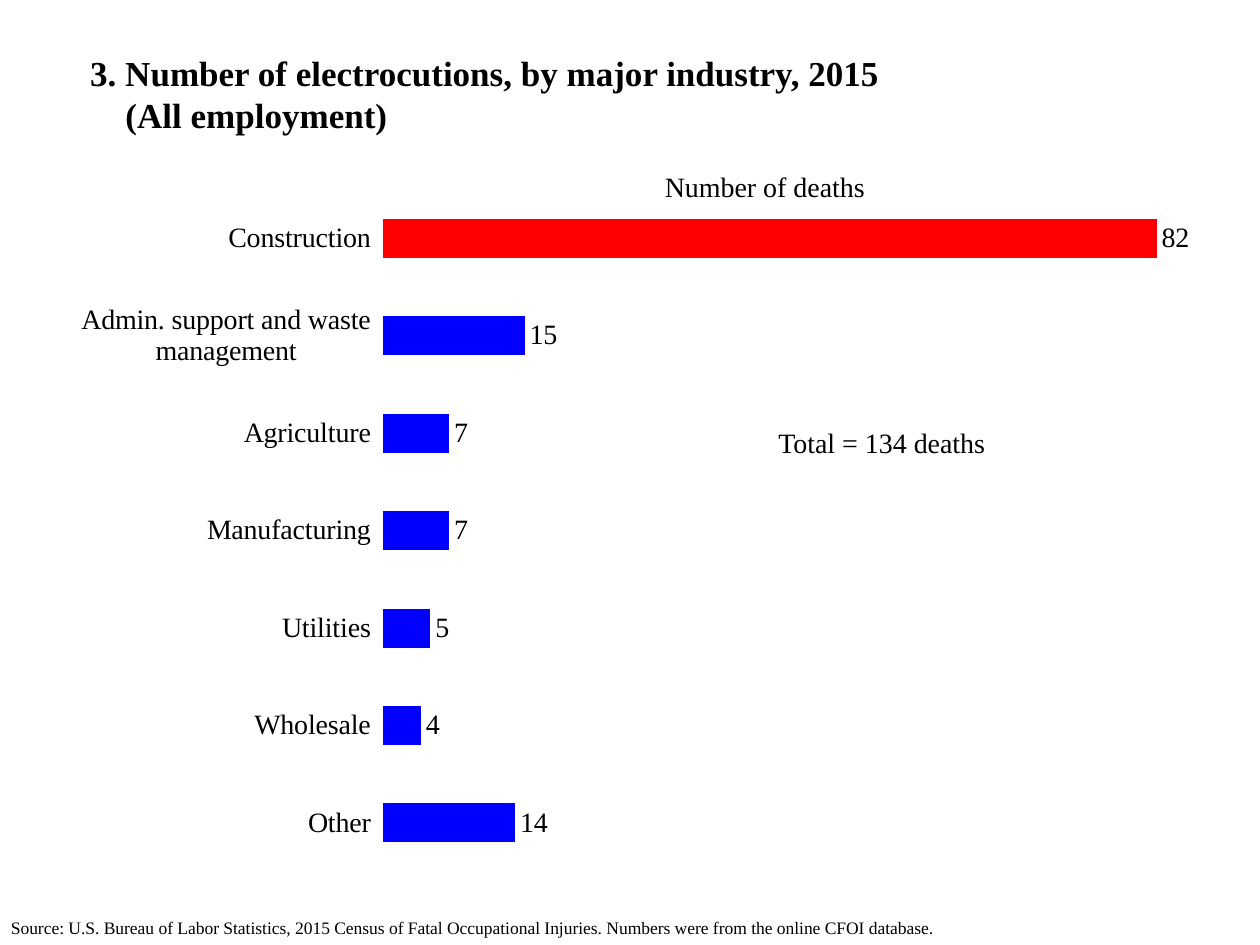
from pptx import Presentation
from pptx.chart.data import CategoryChartData as ChartData
from pptx.dml.color import RGBColor
from pptx.enum.chart import XL_CHART_TYPE as Kind, XL_LABEL_POSITION as Spot
from pptx.enum.chart import XL_TICK_LABEL_POSITION as Tick, XL_TICK_MARK as Mark
from pptx.enum.text import MSO_ANCHOR as Anchor, PP_ALIGN as Align
from pptx.oxml import parse_xml
from pptx.oxml.ns import nsdecls
from pptx.util import Cm, Pt

FONT = "Times New Roman"
BLACK = RGBColor(0, 0, 0)
BLUE = RGBColor(0, 0, 255)
RED = RGBColor(255, 0, 0)

TITLE = "3. Number of electrocutions, by major industry, 2015\v(All employment)"
AXIS = "Number of deaths"
TOTAL = "Total = 134 deaths"
SOURCE = ("Source: U.S. Bureau of Labor Statistics, 2015 Census of Fatal Occupational "
          "Injuries. Numbers were from the online CFOI database.")
DEATHS = [  # bottom bar first
    ("Other", 14),
    ("Wholesale", 4),
    ("Utilities", 5),
    ("Manufacturing", 7),
    ("Agriculture", 7),
    ("Admin. support and waste management", 15),
    ("Construction", 82),
]
KEY = "Construction"
PLOT = dict(x=0.28, y=0.06, w=0.72, h=0.898)  # shares of the chart frame


def style(font, size):
    font.name, font.size, font.color.rgb = FONT, Pt(size), BLACK


def add_text(slide, text, box, size=16, bold=False, align=Align.LEFT,
             anchor=Anchor.TOP, before=0, hang=0):
    shape = slide.shapes.add_textbox(*map(Cm, box))
    frame = shape.text_frame
    frame.word_wrap = True
    frame.vertical_anchor = anchor
    para = frame.paragraphs[0]
    para.text = text
    para.alignment = align
    para.space_before = Pt(before)
    for run in para.runs:
        style(run.font, size)
        run.font.bold = bold
    if hang:
        props = para._p.get_or_add_pPr()
        props.set("marL", str(Cm(hang)))
        props.set("indent", str(-Cm(hang)))


def place_plot(chart):
    """Fix the inner plot area at the shares in PLOT."""
    parts = "".join(f'<c:{k}Mode val="edge"/>' for k in "xy")
    parts += "".join(f'<c:{k} val="{v}"/>' for k, v in PLOT.items())
    layout = parse_xml(
        f'<c:layout {nsdecls("c")}><c:manualLayout><c:layoutTarget val="inner"/>'
        f'{parts}</c:manualLayout></c:layout>')
    area = chart._chartSpace.chart.plotArea
    for old in area.findall(layout.tag):
        area.remove(old)
    area.insert(0, layout)


def add_bars(slide, box):
    names, counts = zip(*DEATHS)
    data = ChartData(number_format="0")
    data.categories = names
    data.add_series(AXIS, counts)
    chart = slide.shapes.add_chart(Kind.BAR_CLUSTERED, *map(Cm, box), data).chart
    chart.has_legend = chart.has_title = False
    style(chart.font, 18)
    place_plot(chart)

    cats, vals = chart.category_axis, chart.value_axis
    cats.format.line.fill.background()
    cats.major_tick_mark = Mark.OUTSIDE
    cats.tick_label_position = Tick.LOW
    style(cats.tick_labels.font, 16)
    vals.minimum_scale, vals.maximum_scale = 0, 90
    vals.has_major_gridlines = vals.visible = False

    plot = chart.plots[0]
    plot.gap_width, plot.vary_by_categories = 150, False
    plot.has_data_labels = True
    labels = plot.data_labels
    labels.show_value = True
    labels.number_format, labels.number_format_is_linked = "0", False
    labels.position = Spot.OUTSIDE_END
    style(labels.font, 16)

    bars = plot.series[0]
    bars.invert_if_negative = False
    for fill, color in ((bars.format.fill, BLUE),
                        (bars.points[names.index(KEY)].format.fill, RED)):
        fill.solid()
        fill.fore_color.rgb = color


def main():
    deck = Presentation()
    deck.slide_width, deck.slide_height = Cm(25.4), Cm(19.05)
    slide = deck.slides.add_slide(deck.slide_layouts[6])
    add_text(slide, TITLE, (1.57, 1.04, 23.81 - 1.57, 1.7), size=20, bold=True,
             anchor=Anchor.MIDDLE, hang=0.71)
    add_bars(slide, (1.07, 2.9, 23.77, 15.32))
    add_text(slide, AXIS, (12.4, 3.3, 6.04, 0.94), align=Align.CENTER)
    add_text(slide, SOURCE, (-0.03, 18.36, 25.4, 0.69), size=10, before=3.5)
    add_text(slide, TOTAL, (15.44, 8.46, 5.72, 0.94))
    deck.save("out.pptx")


if __name__ == "__main__":
    main()
